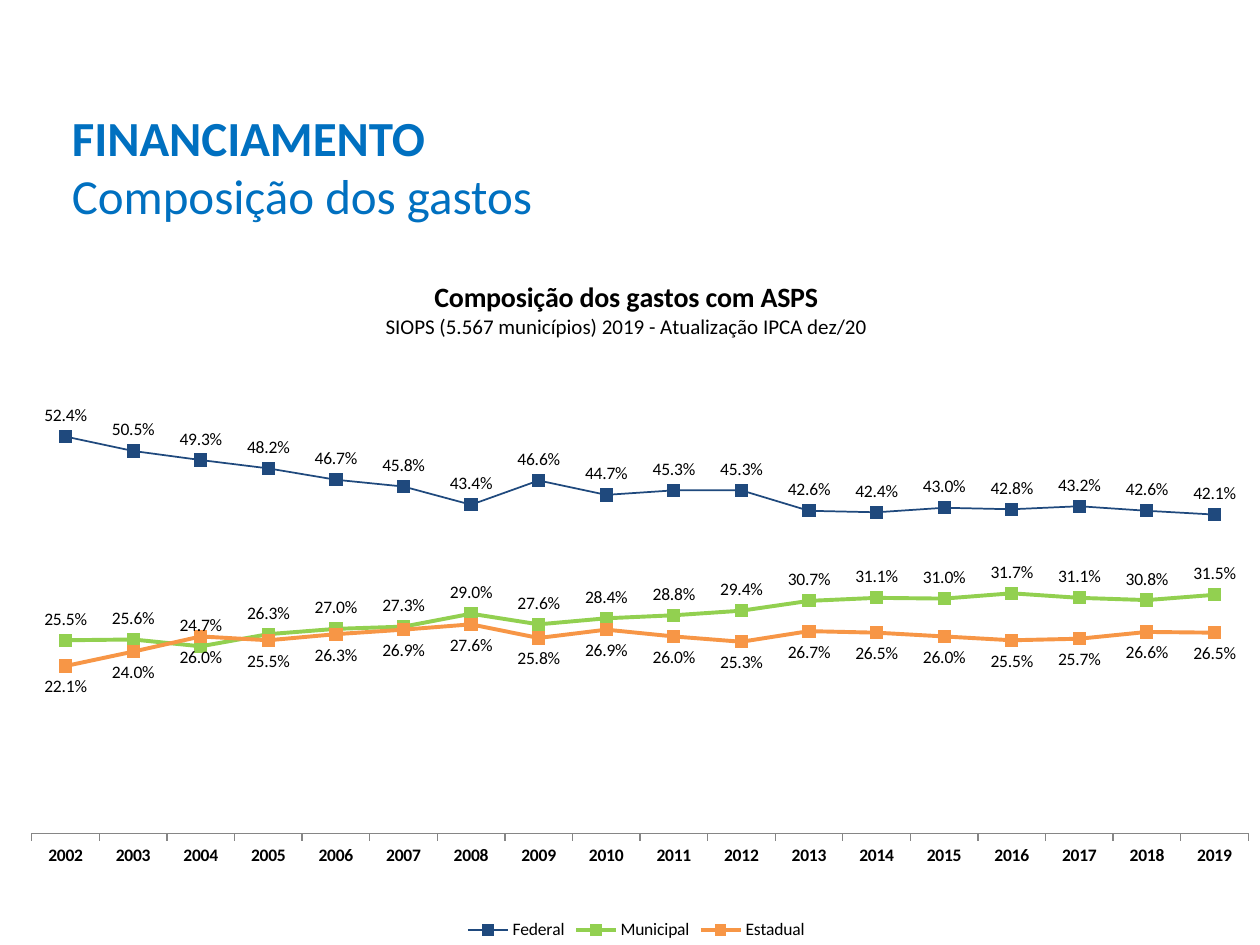
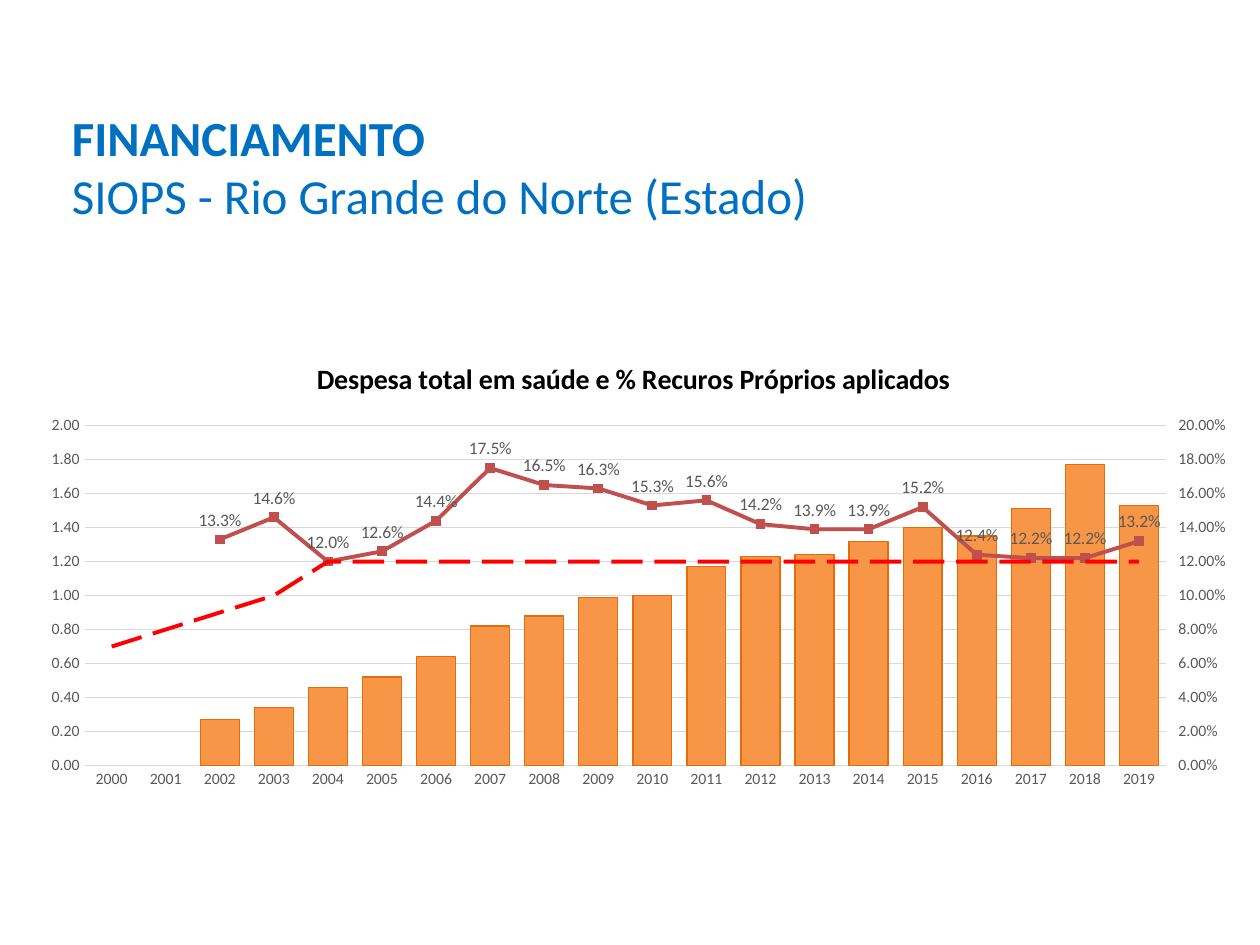
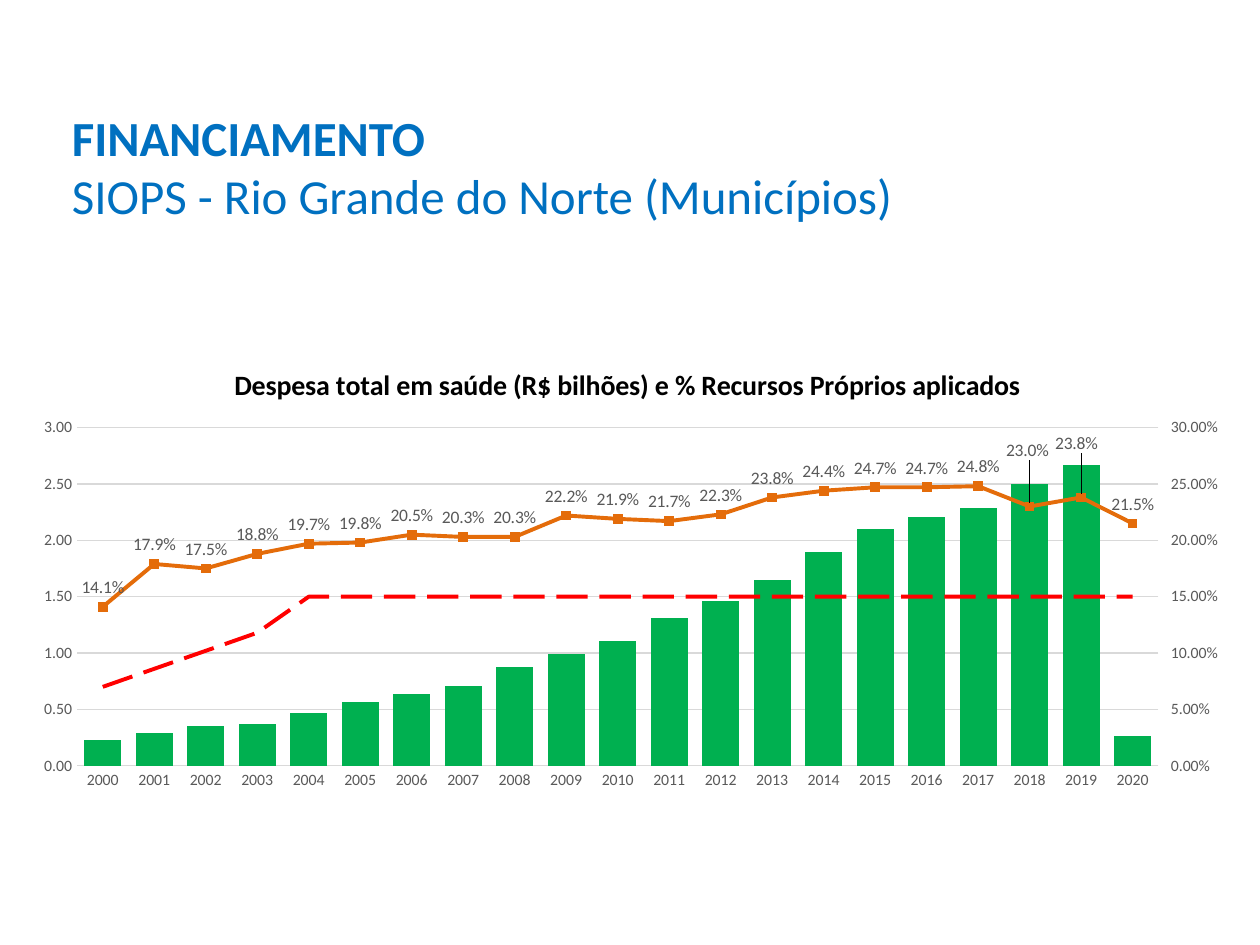
"""Build three slides on the financing of public health spending."""
import copy

import pptx
import pptx.chart.axis
import pptx.chart.data
import pptx.dml.color
import pptx.enum.chart
import pptx.enum.dml
import pptx.enum.text
import pptx.oxml
import pptx.oxml.ns
import pptx.util

Inches = pptx.util.Inches
Pt = pptx.util.Pt
RGBColor = pptx.dml.color.RGBColor
qn = pptx.oxml.ns.qn
XL_CHART_TYPE = pptx.enum.chart.XL_CHART_TYPE
XL_LABEL_POSITION = pptx.enum.chart.XL_LABEL_POSITION
XL_MARKER_STYLE = pptx.enum.chart.XL_MARKER_STYLE
XL_TICK_MARK = pptx.enum.chart.XL_TICK_MARK

FONT = "Calibri"
BLACK = RGBColor(0x00, 0x00, 0x00)
TITLE_BLUE = RGBColor(0x00, 0x70, 0xC0)
NAVY = RGBColor(0x1F, 0x49, 0x7D)
LIME = RGBColor(0x92, 0xD0, 0x50)
ORANGE = RGBColor(0xF7, 0x96, 0x46)
DARK_ORANGE = RGBColor(0xE4, 0x6C, 0x0A)
BRICK = RGBColor(0xC0, 0x50, 0x4D)
RED = RGBColor(0xFF, 0x00, 0x00)
GREEN = RGBColor(0x00, 0xB0, 0x50)
GRAY_TEXT = RGBColor(0x59, 0x59, 0x59)
GRAY_LINE = RGBColor(0xD9, 0xD9, 0xD9)
AXIS_GRAY = RGBColor(0x86, 0x86, 0x86)
PERCENT = "0.0%"
BILLIONS = "#,##0.00,,,"

FEDERAL = [52.4, 50.5, 49.3, 48.2, 46.7, 45.8, 43.4, 46.6, 44.7, 45.3, 45.3, 42.6,
           42.4, 43.0, 42.8, 43.2, 42.6, 42.1]
MUNICIPAL = [25.5, 25.6, 24.7, 26.3, 27.0, 27.3, 29.0, 27.6, 28.4, 28.8, 29.4, 30.7,
             31.1, 31.0, 31.7, 31.1, 30.8, 31.5]
ESTADUAL = [22.1, 24.0, 26.0, 25.5, 26.3, 26.9, 27.6, 25.8, 26.9, 26.0, 25.3, 26.7,
            26.5, 26.0, 25.5, 25.7, 26.6, 26.5]

STATE_MILLIONS = [None, None, 270, 340, 460, 520, 640, 820, 880, 990, 1000, 1170,
                  1230, 1240, 1320, 1400, 1350, 1510, 1770, 1530]
STATE_APPLIED = [None, None, 13.3, 14.6, 12.0, 12.6, 14.4, 17.5, 16.5, 16.3, 15.3,
                 15.6, 14.2, 13.9, 13.9, 15.2, 12.4, 12.2, 12.2, 13.2]
STATE_MINIMUM = [7, 8, 9, 10] + [12] * 16

CITY_MILLIONS = [230, 290, 350, 370, 470, 570, 640, 710, 880, 990, 1110, 1310, 1460,
                 1650, 1900, 2100, 2210, 2290, 2500, 2670, 260]
CITY_APPLIED = [14.1, 17.9, 17.5, 18.8, 19.7, 19.8, 20.5, 20.3, 20.3, 22.2, 21.9,
                21.7, 22.3, 23.8, 24.4, 24.7, 24.7, 24.8, 23.0, 23.8, 21.5]
CITY_MINIMUM = [7, 8.6, 10.2, 11.8] + [15] * 17


def ratios(percents):
    """Turn percentages into ratios, keeping gaps."""
    return [None if value is None else round(value / 100, 3) for value in percents]


def chart_xml(text):
    """Parse a chart element written with the c prefix."""
    head, tail = text.split(">", 1)
    slash = "/" if head.endswith("/") else ""
    return pptx.oxml.parse_xml(
        f"{head.rstrip('/')} {pptx.oxml.ns.nsdecls('c')}{slash}>{tail}")


def set_layout(parent, index, box, target="", edge=True):
    """Give a chart part a manual layout as fractions of the chart."""
    for old in parent.findall(qn("c:layout")):
        parent.remove(old)
    parts = [f'<c:layoutTarget val="{target}"/>'] if target else []
    if edge:
        parts += ['<c:xMode val="edge"/>', '<c:yMode val="edge"/>']
    parts += [f'<c:{name} val="{value}"/>' for name, value in zip("xywh", box)]
    parent.insert(index, chart_xml(
        f"<c:layout><c:manualLayout>{''.join(parts)}</c:manualLayout></c:layout>"))


def style_font(font, size, color, bold=False):
    """Set the typeface, size, colour and weight of a font."""
    font.name = FONT
    font.size = Pt(size)
    font.color.rgb = color
    font.bold = bold


def add_titled_slide(presentation, subtitle, width):
    """Add a slide with the shared two-line title."""
    slide = presentation.slides.add_slide(presentation.slide_layouts[5])
    title = slide.shapes.title
    title.left, title.top = Inches(0.47), Inches(0.8)
    title.width, title.height = Inches(width), Inches(1.04)
    frame = title.text_frame
    frame.text = f"FINANCIAMENTO\n{subtitle}"
    frame.word_wrap = True
    frame.auto_size = pptx.enum.text.MSO_AUTO_SIZE.NONE
    frame.vertical_anchor = pptx.enum.text.MSO_ANCHOR.TOP
    for paragraph, bold in zip(frame.paragraphs, (True, False)):
        paragraph.alignment = pptx.enum.text.PP_ALIGN.LEFT
        paragraph.space_before = Pt(0)
        style_font(paragraph.runs[0].font, 28, TITLE_BLUE, bold)
    return slide


def add_chart(slide, box, chart_type, first_year, series, title, title_at, plot_box):
    """Add a chart with yearly categories, a title and a fixed plot area."""
    data = pptx.chart.data.CategoryChartData()
    data.categories = [str(first_year + step) for step in range(len(series[0][1]))]
    for name, values, number_format in series:
        data.add_series(name, values, number_format)
    chart = slide.shapes.add_chart(chart_type, *map(Inches, box), data).chart
    style_font(chart.font, 10, BLACK)
    chart.has_legend = False
    frame = chart.chart_title.text_frame
    frame.text = title
    for paragraph, size, bold in zip(frame.paragraphs, (16, 12), (True, False)):
        style_font(paragraph.runs[0].font, size, BLACK, bold)
    set_layout(chart.element.find(".//" + qn("c:title")), 1, title_at)
    set_layout(chart.element.find(".//" + qn("c:plotArea")), 0, plot_box, "inner")
    chart.plots[0].vary_by_categories = False
    return chart


def style_line(series, color, width, marker_size=0):
    """Draw a straight series line with optional square markers."""
    series.smooth = False
    series.format.line.color.rgb = color
    series.format.line.width = Pt(width)
    if not marker_size:
        series.marker.style = XL_MARKER_STYLE.NONE
        return
    series.marker.style = XL_MARKER_STYLE.SQUARE
    series.marker.size = marker_size
    series.marker.format.fill.solid()
    series.marker.format.fill.fore_color.rgb = color
    series.marker.format.line.fill.background()


def label_values(series, color, position=XL_LABEL_POSITION.ABOVE):
    """Show percentage labels beside the points of a series."""
    labels = series.data_labels
    labels.show_value = True
    labels.number_format = PERCENT
    labels.number_format_is_linked = False
    labels.position = position
    style_font(labels.font, 10, color)


def shift_label(series, index, shift):
    """Move the label of one point by a fraction of the chart."""
    label = series.points[index].data_label
    label.position = XL_LABEL_POSITION.ABOVE
    style_font(label.font, 10, GRAY_TEXT)
    element = next(item for item in series.data_labels._element.findall(qn("c:dLbl"))
                   if item.find(qn("c:idx")).get("val") == str(index))
    set_layout(element, 1, shift, edge=False)
    element.insert(2, chart_xml(f'<c:numFmt formatCode="{PERCENT}" sourceLinked="0"/>'))


def add_composition_chart(slide, box):
    """Add the line chart of spending shares by level of government."""
    chart = add_chart(
        slide, box, XL_CHART_TYPE.LINE_MARKERS, 2002,
        [("Federal", ratios(FEDERAL), PERCENT),
         ("Municipal", ratios(MUNICIPAL), PERCENT),
         ("Estadual", ratios(ESTADUAL), PERCENT)],
        "Composição dos gastos com ASPS\n"
        "SIOPS (5.567 municípios) 2019 - Atualização IPCA dez/20",
        (0.3, 0.05), (0.025, 0.198, 0.956, 0.644))
    chart.has_legend = True
    chart.legend.position = pptx.enum.chart.XL_LEGEND_POSITION.BOTTOM
    chart.legend.include_in_layout = False
    style_font(chart.legend.font, 10, BLACK)
    years = chart.category_axis
    years.major_tick_mark = XL_TICK_MARK.OUTSIDE
    years.format.line.color.rgb = AXIS_GRAY
    style_font(years.tick_labels.font, 10, BLACK, True)
    shares = chart.value_axis
    shares.minimum_scale, shares.maximum_scale = 0, 0.6
    shares.has_major_gridlines = False
    shares.visible = False
    styles = ((NAVY, 1, XL_LABEL_POSITION.ABOVE),
              (LIME, 2.25, XL_LABEL_POSITION.ABOVE),
              (ORANGE, 2.25, XL_LABEL_POSITION.BELOW))
    for series, (color, width, position) in zip(chart.plots[0].series, styles):
        style_line(series, color, width, 7)
        label_values(series, BLACK, position)


def style_spending_axes(chart, maximum, step):
    """Format the year axis and the axis of billions."""
    years, spending = chart.category_axis, chart.value_axis
    for axis in (years, spending):
        axis.major_tick_mark = XL_TICK_MARK.NONE
        style_font(axis.tick_labels.font, 9, GRAY_TEXT)
    years.format.line.color.rgb = GRAY_LINE
    years.format.line.width = Pt(0.75)
    spending.format.line.fill.background()
    spending.major_gridlines.format.line.color.rgb = GRAY_LINE
    spending.major_gridlines.format.line.width = Pt(0.75)
    spending.tick_labels.number_format = BILLIONS
    spending.tick_labels.number_format_is_linked = False
    spending.minimum_scale = 0
    spending.maximum_scale = maximum * 10 ** 9
    spending.major_unit = step * 10 ** 9


def move_lines_to_right_axis(chart, maximum, step):
    """Turn all series after the first into lines on a right percentage axis."""
    plot_area = chart.element.find(".//" + qn("c:plotArea"))
    bars = plot_area.find(qn("c:barChart"))
    lines = chart_xml(
        '<c:lineChart><c:grouping val="standard"/><c:varyColors val="0"/>'
        '<c:marker val="1"/><c:axId val="5001"/><c:axId val="5002"/></c:lineChart>')
    for position, series in enumerate(bars.findall(qn("c:ser"))[1:], 2):
        for invert in series.findall(qn("c:invertIfNegative")):
            series.remove(invert)
        lines.insert(position, series)
    bars.addnext(lines)

    left_axis = plot_area.find(qn("c:valAx"))
    right_axis = copy.deepcopy(left_axis)
    hidden_years = copy.deepcopy(plot_area.find(qn("c:catAx")))
    left_axis.addnext(right_axis)
    right_axis.addnext(hidden_years)
    for axis, own, other in ((hidden_years, "5001", "5002"),
                             (right_axis, "5002", "5001")):
        axis.find(qn("c:axId")).set("val", own)
        axis.find(qn("c:crossAx")).set("val", other)
    right_axis.find(qn("c:axPos")).set("val", "r")
    right_axis.find(qn("c:crosses")).set("val", "max")
    pptx.chart.axis.CategoryAxis(hidden_years).visible = False
    percent_axis = pptx.chart.axis.ValueAxis(right_axis)
    percent_axis.has_major_gridlines = False
    percent_axis.major_tick_mark = XL_TICK_MARK.OUTSIDE
    percent_axis.tick_labels.number_format = "0.00%"
    percent_axis.maximum_scale = maximum
    percent_axis.major_unit = step


def add_spending_chart(slide, box, title, title_at, millions, applied, minimum,
                       maximum, step, bar_color, line_color, border=None):
    """Add spending columns with lines of applied and minimum percentages."""
    spending = [None if value is None else value * 10 ** 6 for value in millions]
    chart = add_chart(
        slide, box, XL_CHART_TYPE.COLUMN_CLUSTERED, 2000,
        [("Series 1", spending, BILLIONS),
         ("Series 2", ratios(applied), PERCENT),
         ("Series 3", ratios(minimum), PERCENT)],
        title, title_at, (0.045, 0.213, 0.895, 0.703))
    style_spending_axes(chart, maximum, step)
    move_lines_to_right_axis(chart, round(maximum / 10, 2), round(step / 10, 2))
    bar_plot, line_plot = chart.plots
    bar_plot.gap_width = 39
    bars = bar_plot.series[0]
    bars.format.fill.solid()
    bars.format.fill.fore_color.rgb = bar_color
    if border is None:
        bars.format.line.fill.background()
    else:
        bars.format.line.color.rgb = border
        bars.format.line.width = Pt(0.75)
    applied_line, minimum_line = line_plot.series
    style_line(applied_line, line_color, 2.25, 5)
    label_values(applied_line, GRAY_TEXT)
    style_line(minimum_line, RED, 2.25)
    minimum_line.format.line.dash_style = pptx.enum.dml.MSO_LINE_DASH_STYLE.LONG_DASH
    return applied_line


def main():
    """Build the slides and save the presentation."""
    presentation = pptx.Presentation()
    presentation.slide_width, presentation.slide_height = Inches(10), Inches(7.5)

    slide = add_titled_slide(presentation, "Composição dos gastos", 8.71)
    add_composition_chart(slide, (0, 1.9, 10.1, 5.6))

    slide = add_titled_slide(presentation, "SIOPS - Rio Grande do Norte (Estado)", 10.11)
    add_spending_chart(
        slide, (0.24, 2.56, 9.59, 3.84),
        "Despesa total em saúde e % Recuros Próprios aplicados", (0.233, 0.067),
        STATE_MILLIONS, STATE_APPLIED, STATE_MINIMUM, 2, 0.2,
        ORANGE, BRICK, DARK_ORANGE)

    slide = add_titled_slide(
        presentation, "SIOPS - Rio Grande do Norte (Municípios)", 10.11)
    applied_line = add_spending_chart(
        slide, (0.18, 2.58, 9.59, 3.82),
        "Despesa total em saúde (R$ bilhões) e % Recursos Próprios aplicados",
        (0.171, 0.075), CITY_MILLIONS, CITY_APPLIED, CITY_MINIMUM, 3, 0.5,
        GREEN, DARK_ORANGE)
    shift_label(applied_line, 18, (-0.002, -0.077))
    shift_label(applied_line, 19, (-0.004, -0.073))

    presentation.save("out.pptx")


if __name__ == "__main__":
    main()
